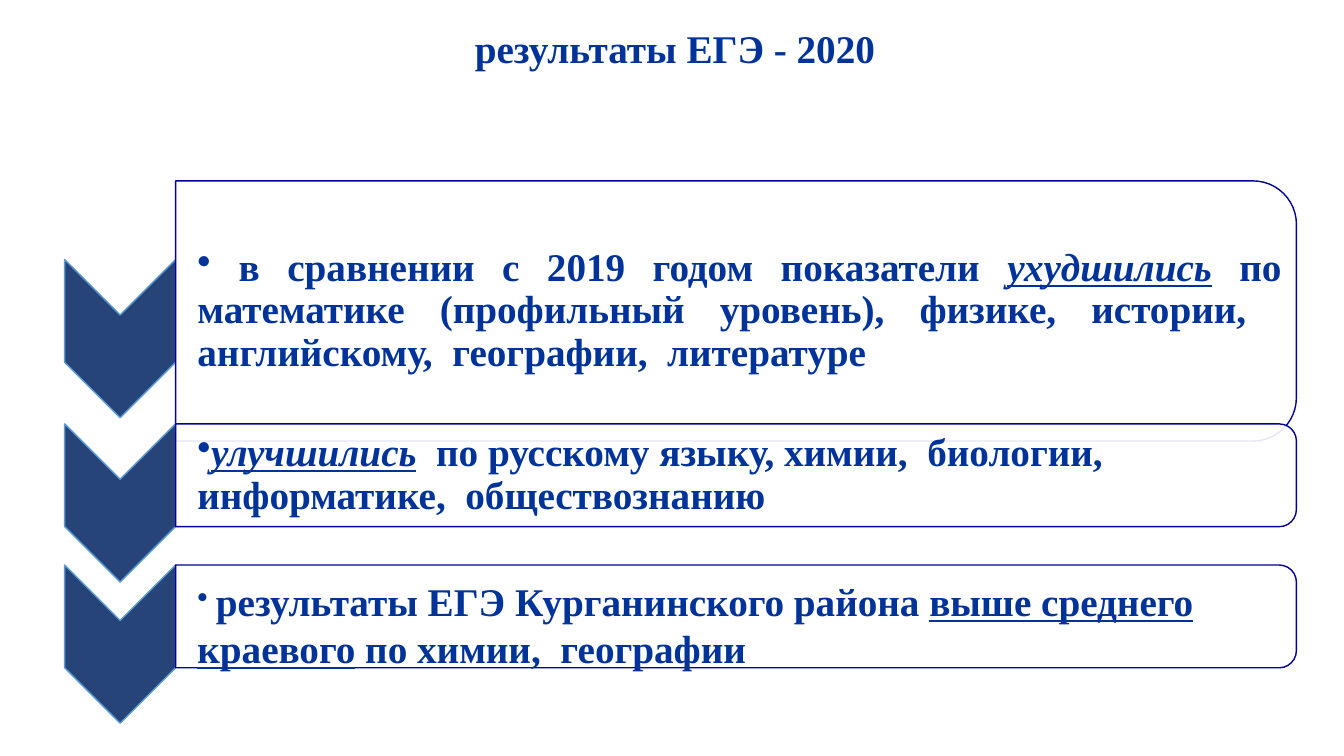
from dataclasses import dataclass

from lxml import etree
from pptx import Presentation
from pptx.dml.color import RGBColor
from pptx.enum.shapes import MSO_SHAPE
from pptx.enum.text import MSO_ANCHOR, PP_ALIGN
from pptx.oxml.ns import qn
from pptx.util import Pt

CHEVRON = MSO_SHAPE.CHEVRON
ROUND = MSO_SHAPE.ROUND_2_SAME_RECTANGLE
MIDDLE = MSO_ANCHOR.MIDDLE
LEFT, CENTER, JUSTIFY = PP_ALIGN.LEFT, PP_ALIGN.CENTER, PP_ALIGN.JUSTIFY


@dataclass(frozen=True)
class Theme:
    font: str = "Times New Roman"
    size: float = 28
    small: float = 22
    ink: str = "003399"
    arrow: str = "264478"
    edge: str = "5B9BD5"
    panel: str = "FFFFFF"
    frame: str = "000099"


THEME = Theme()
BAND = 73.4  # straight part of a chevron, on which its panel is centred
ARROW = (79.2, 113)

# Row: chevron top, panel height, text width, text drop, spacing, align, runs
# Run: text, style (b bold, i italic, u underline, s small)
ROWS = [
    (185.4, 185.8, 791.3, 0, 0.9, JUSTIFY, [
        (" ", "bi"),
        ("в сравнении с 2019 годом показатели ", "b"),
        ("ухудшились", "biu"),
        (" ", "bi"),
        ("по математике (профильный уровень), физике, истории,  "
         "английскому,  географии,  литературе", "b")]),
    (302.8, BAND, 797, 0, 0.9, LEFT, [
        ("улучшились", "biu"),
        ("  по русскому языку, химии,  биологии,  информатике,  "
         "обществознанию", "b")]),
    (403.6, BAND, 797, 6, 1.0, LEFT, [
        (" ", "s"),
        ("результаты ЕГЭ Курганинского района ", "b"),
        ("выше среднего краевого", "bu"),
        (" по химии,  географии", "b")]),
]


def turned(slide, kind, box, fill, line):
    """Add a shape turned by 90 degrees that fills the box as seen."""
    x, y, w, h = box
    shape = slide.shapes.add_shape(
        kind, Pt(x + (w - h) / 2), Pt(y + (h - w) / 2), Pt(h), Pt(w))
    shape.rotation = 90
    shape.shadow.inherit = False
    shape.fill.solid()
    shape.fill.fore_color.rgb = RGBColor.from_string(fill)
    shape.line.color.rgb = RGBColor.from_string(line)
    shape.line.width = Pt(1)
    return shape


def fade(shape, share):
    """Set the opacity of a solid fill."""
    color = shape.fill._xPr.find(qn("a:solidFill"))[0]
    etree.SubElement(color, qn("a:alpha"), val=str(round(share * 100000)))


def write(slide, box, runs, align, space, inset, dot=False):
    shape = slide.shapes.add_textbox(*map(Pt, box))
    frame = shape.text_frame
    frame.word_wrap = True
    frame.vertical_anchor = MIDDLE
    frame.margin_left = Pt(inset)
    frame.margin_right = frame.margin_top = frame.margin_bottom = Pt(1.4)
    para = frame.paragraphs[0]
    para.alignment = align
    para.line_spacing = space
    if dot:
        props = para._p.get_or_add_pPr()
        props.set("marL", "0")
        props.set("indent", "0")
        etree.SubElement(props, qn("a:buChar"), char="•")
    for text, style in runs:
        run = para.add_run()
        run.text = text
        font = run.font
        font.name = THEME.font
        font.size = Pt(THEME.small if "s" in style else THEME.size)
        font.color.rgb = RGBColor.from_string(THEME.ink)
        font.bold = "b" in style
        font.italic = "i" in style
        font.underline = "u" in style


def title(slide, box):
    write(slide, box, [("результаты ЕГЭ - 2020", "b")], CENTER, 0.9, 1.4)


def row(slide, box, high, wide, drop, space, align, runs):
    """Place a chevron, then its panel and text to the right of it."""
    x, y, w = box
    step, tall = ARROW
    turned(slide, CHEVRON, (x, y, step, tall), THEME.arrow, THEME.edge)
    left, mid = x + step, y + BAND / 2
    panel = turned(slide, ROUND, (left, mid - high / 2, w - step, high),
                   THEME.panel, THEME.frame)
    fade(panel, 0.9)
    deep = high * 0.9
    write(slide, (left, mid - deep / 2 + drop, wide, deep),
          runs, align, space, 15.6, dot=True)


def main():
    deck = Presentation()
    deck.slide_width, deck.slide_height = Pt(960), Pt(540)
    slide = deck.slides.add_slide(deck.slide_layouts[6])
    title(slide, (176.4, 22.3, 611.3, 27.4))
    for top, *rest in ROWS:
        row(slide, (46.2, top, 879.8), *rest)
    deck.save("out.pptx")


if __name__ == "__main__":
    main()
